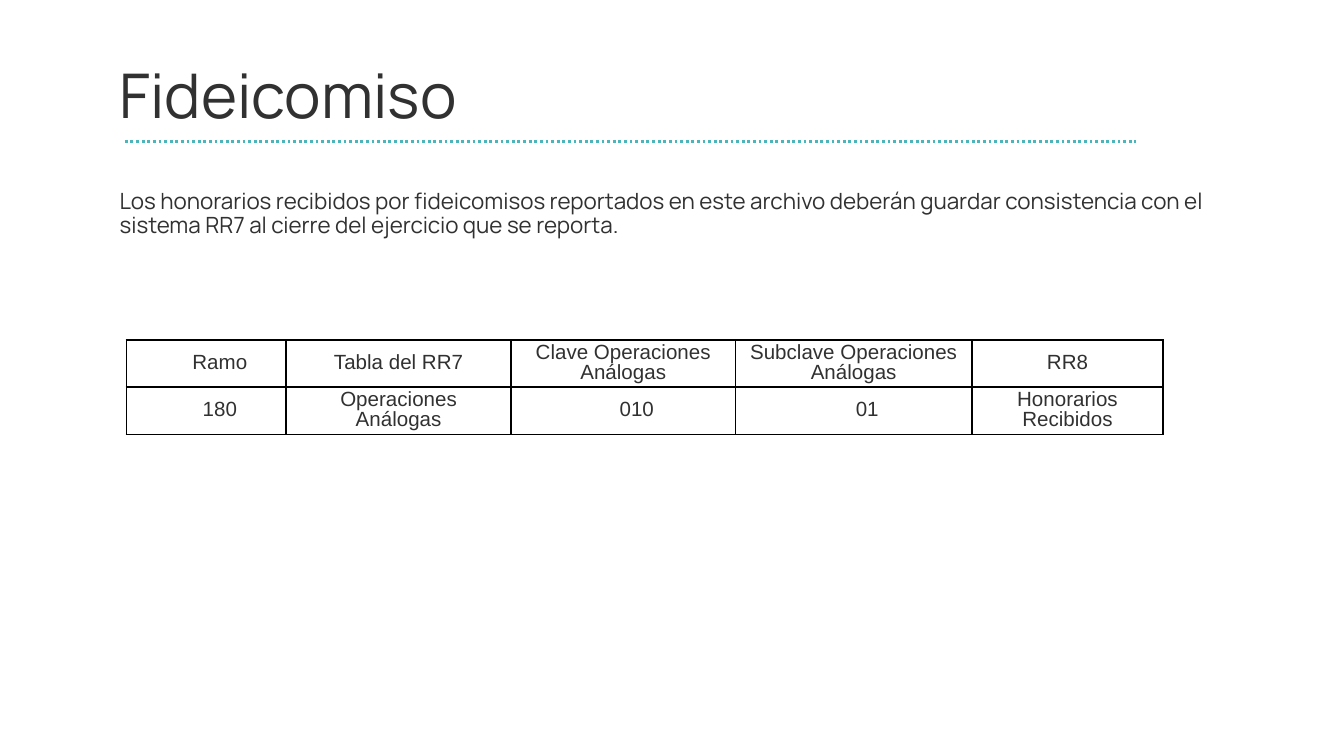
from lxml.etree import SubElement
from pptx import Presentation
from pptx.dml.color import RGBColor
from pptx.enum.dml import MSO_LINE
from pptx.enum.shapes import MSO_CONNECTOR
from pptx.enum.text import MSO_ANCHOR, MSO_AUTO_SIZE, PP_ALIGN
from pptx.oxml.ns import qn
from pptx.util import Cm, Pt

TITLE = "Fideicomiso"
BODY = ("Los honorarios recibidos por fideicomisos reportados en este archivo deberán "
        "guardar consistencia con el sistema RR7 al cierre del ejercicio que se reporta.")
ROWS = [
    ["Ramo", "Tabla del RR7", "Clave Operaciones Análogas",
     "Subclave Operaciones Análogas", "RR8"],
    ["180", "Operaciones Análogas", "010", "01", "Honorarios Recibidos"],
]
INDENTED = {"Ramo", "180", "010", "01"}
COL_WIDTHS = [3.02, 4.25, 4.24, 4.47, 3.61]
ROW_HEIGHT = 0.89
INK, TEAL, WHITE, BLACK = "313131", "4AB6BB", "FFFFFF", "000000"


def rgb(value):
    return RGBColor.from_string(value)


def write(tf, text, size, font, align=PP_ALIGN.LEFT, spacing=0.9, after=0, indent=(0, 0)):
    p = tf.paragraphs[0]
    p.alignment, p.line_spacing = align, spacing
    p.space_before, p.space_after = Pt(0), Pt(after)
    left, first = indent
    pPr = p._p.get_or_add_pPr()
    pPr.set("marL", str(Cm(left)))
    pPr.set("indent", str(Cm(first)))
    SubElement(pPr, qn("a:buNone"))
    if left:
        tabs = SubElement(pPr, qn("a:tabLst"))
        SubElement(tabs, qn("a:tab"), pos=str(Cm(left)), algn="l")
    r = p.add_run()
    r.text = text
    r.font.size, r.font.name, r.font.color.rgb = Pt(size), font, rgb(INK)


def fill_placeholder(sp, box, text, size):
    sp.left, sp.top, sp.width, sp.height = (Cm(v) for v in box)
    tf = sp.text_frame
    tf.word_wrap, tf.auto_size = True, MSO_AUTO_SIZE.NONE
    tf.vertical_anchor = MSO_ANCHOR.MIDDLE
    tf.margin_left = tf.margin_right = tf.margin_top = tf.margin_bottom = Cm(0.25)
    write(tf, text, size, "Manrope")


def add_borders(cell):
    tcPr = cell._tc.get_or_add_tcPr()
    for side in ("lnL", "lnR", "lnT", "lnB"):
        ln = SubElement(tcPr, qn(f"a:{side}"), w=str(Pt(1)))
        SubElement(SubElement(ln, qn("a:solidFill")), qn("a:srgbClr"), val=BLACK)


def fill_cell(cell, text):
    cell.margin_left = cell.margin_right = Cm(0.18)
    cell.margin_top = cell.margin_bottom = 0
    cell.vertical_anchor = MSO_ANCHOR.MIDDLE
    add_borders(cell)
    cell.fill.solid()
    cell.fill.fore_color.rgb = rgb(WHITE)
    write(cell.text_frame, text, 11, "Arial", PP_ALIGN.CENTER, Pt(10.8), 6,
          (1.27, -0.76) if text in INDENTED else (0, 0))


prs = Presentation()
prs.slide_width, prs.slide_height = Cm(25.4), Cm(14.29)
s = prs.slides.add_slide(prs.slide_layouts[1])

fill_placeholder(s.shapes.title, (2.01, 1.07, 17.63, 1.6), TITLE, 33)
fill_placeholder(s.placeholders[1], (2.01, 2.97, 21.41, 2.16), BODY, 12)

rule = s.shapes.add_connector(MSO_CONNECTOR.STRAIGHT, Cm(2.36), Cm(2.67), Cm(21.46), Cm(2.67))
rule.line.color.rgb, rule.line.width = rgb(TEAL), Pt(1.5)
rule.line.dash_style = MSO_LINE.ROUND_DOT
SubElement(rule._element.spPr, qn("a:effectLst"))

table = s.shapes.add_table(len(ROWS), len(COL_WIDTHS), Cm(2.39), Cm(6.43),
                           Cm(sum(COL_WIDTHS)), Cm(ROW_HEIGHT * len(ROWS))).table
table.first_row = table.horz_banding = False
for col, width in zip(table.columns, COL_WIDTHS):
    col.width = Cm(width)
for i, texts in enumerate(ROWS):
    table.rows[i].height = Cm(ROW_HEIGHT)
    for j, text in enumerate(texts):
        fill_cell(table.cell(i, j), text)

prs.save("out.pptx")
